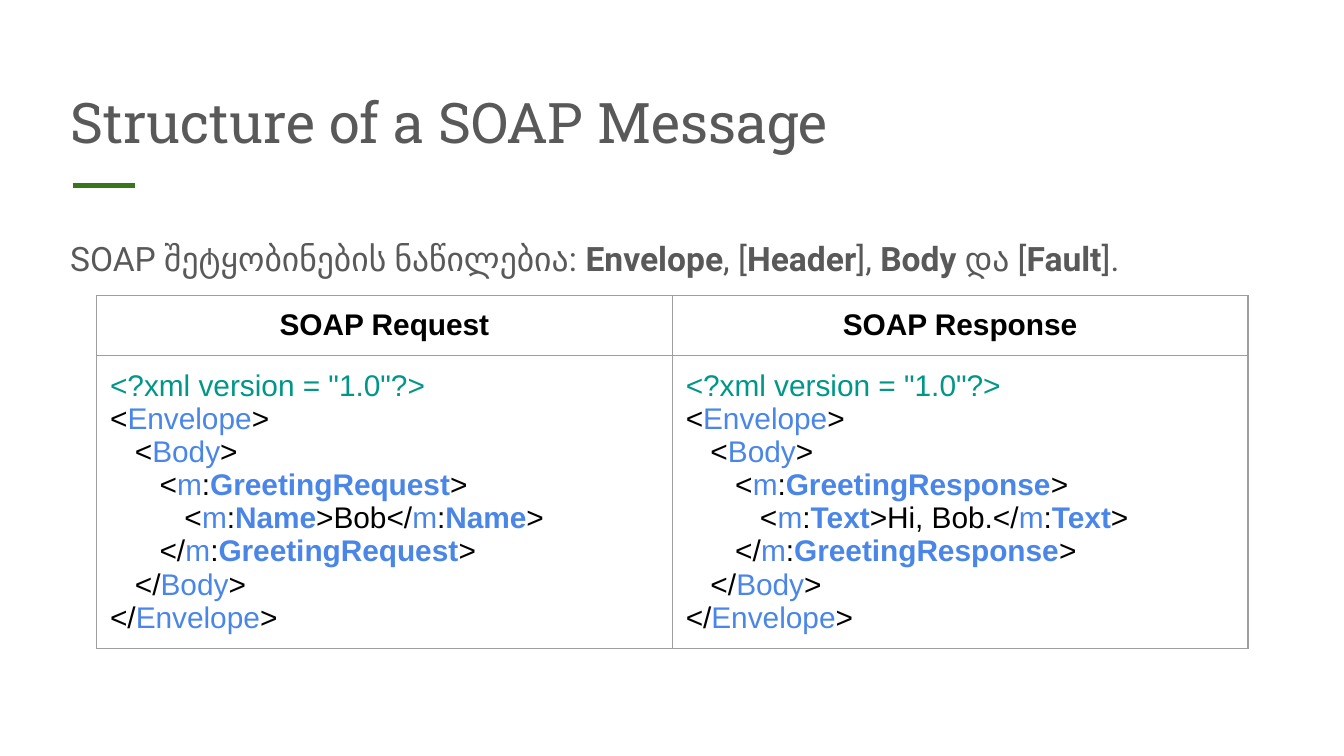
"""Builds the slide on the structure of a SOAP message."""
from lxml.etree import SubElement
from pptx import Presentation
from pptx.dml.color import RGBColor as Rgb
from pptx.enum.shapes import MSO_CONNECTOR as Conn
from pptx.enum.text import MSO_ANCHOR as Anchor, MSO_AUTO_SIZE as Auto, PP_ALIGN as Align
from pptx.oxml import parse_xml
from pptx.oxml.ns import nsdecls, qn
from pptx.util import Pt

HUES = {"gray": "595959", "ink": "000000", "decl": "009688",
        "tag": "4A86E8", "rule": "38761D", "grid": "9E9E9E"}
TITLE = "Structure of a SOAP Message"
INTRO = [("SOAP შეტყობინების ნაწილებია: ", False), ("Envelope", True),
         (", [", False), ("Header", True), ("], ", False), ("Body", True),
         (" და [", False), ("Fault", True), ("].", False)]
CALLS = [("SOAP Request", "GreetingRequest", "Name", "Bob"),
         ("SOAP Response", "GreetingResponse", "Text", "Hi, Bob.")]
STEP = "   "
HEAD = {"name": "Roboto Slab", "size": Pt(30), "bold": False}
LEAD = {"name": "Roboto", "size": Pt(18)}
CODE = {"name": "Arial", "size": Pt(16)}
INSET = {f"margin_{side}": Pt(7.2) for side in ("left", "right", "top", "bottom")}
ROWS = (32, 157)
COL = 308.4


def put(obj, vals):
    for key, val in vals.items():
        setattr(obj, key, val)


def write(para, runs, base):
    for text, hue, bold in runs:
        run = para.add_run()
        run.text = text
        put(run.font, {**base, "bold": bold})
        run.font.color.rgb = Rgb.from_string(HUES[hue])


def tag(name, mark="<"):
    return [(mark, "ink", False), (name, "tag", False), (">", "ink", False)]


def item(name, mark="<"):
    return [(mark, "ink", False), ("m", "tag", False), (":", "ink", False),
            (name, "tag", True), (">", "ink", False)]


def listing(call, field, value):
    leaf = item(field) + [(value, "ink", False)] + item(field, "</")
    nest = [(0, tag("Envelope")), (1, tag("Body")), (2, item(call)), (3, leaf),
            (2, item(call, "</")), (1, tag("Body", "</")), (0, tag("Envelope", "</"))]
    lines = [[('<?xml version = "1.0"?>', "decl", False)]]
    for depth, ((mark, hue, bold), *rest) in nest:
        lines.append([(STEP * depth + mark, hue, bold), *rest])
    return lines


def fill_cell(cell, lines, align):
    put(cell, INSET)
    cell.fill.background()
    for num, runs in enumerate(lines):
        para = cell.text_frame.add_paragraph() if num else cell.text_frame.paragraphs[0]
        para.alignment = align
        write(para, runs, CODE)
    props = cell._tc.get_or_add_tcPr()
    for num, side in enumerate(("lnL", "lnR", "lnT", "lnB")):
        props.insert(num, parse_xml(
            f'<a:{side} {nsdecls("a")} w="{Pt(0.75)}"><a:solidFill>'
            f'<a:srgbClr val="{HUES["grid"]}"/></a:solidFill></a:{side}>'))


def main():
    deck = Presentation()
    put(deck, {"slide_width": Pt(720), "slide_height": Pt(405)})
    slide = deck.slides.add_slide(deck.slide_layouts[5])
    shapes = slide.shapes

    line = shapes.add_connector(Conn.STRAIGHT, Pt(38.9), Pt(99.3), Pt(72.5), Pt(99.3))
    line.line.color.rgb = Rgb.from_string(HUES["rule"])
    line.line.width = Pt(3)
    SubElement(line._element.spPr, qn("a:effectLst"))

    title = shapes.title
    put(title, {"left": Pt(30.5), "top": Pt(36), "width": Pt(659), "height": Pt(54)})
    intro = shapes.add_textbox(Pt(30.5), Pt(117.2), Pt(659), Pt(242.8))
    for box, anchor, runs, base in (
            (title, Anchor.BOTTOM, [(TITLE, "gray", False)], HEAD),
            (intro, Anchor.TOP, [(text, "gray", bold) for text, bold in INTRO], LEAD)):
        frame = box.text_frame
        put(frame, {**INSET, "word_wrap": True, "auto_size": Auto.NONE,
                    "vertical_anchor": anchor})
        frame.paragraphs[0].alignment = Align.LEFT
        write(frame.paragraphs[0], runs, base)
    intro.text_frame.paragraphs[0].line_spacing = 1.15

    grid = shapes.add_table(len(ROWS), len(CALLS), Pt(51.8), Pt(158.4),
                            Pt(COL * len(CALLS)), Pt(sum(ROWS))).table
    put(grid, {"first_row": False, "horz_banding": False})
    for row, tall in zip(grid.rows, ROWS):
        row.height = Pt(tall)
    for num, (name, *parts) in enumerate(CALLS):
        grid.columns[num].width = Pt(COL)
        fill_cell(grid.cell(0, num), [[(name, "ink", True)]], Align.CENTER)
        fill_cell(grid.cell(1, num), listing(*parts), Align.LEFT)

    deck.save("out.pptx")


if __name__ == "__main__":
    main()
